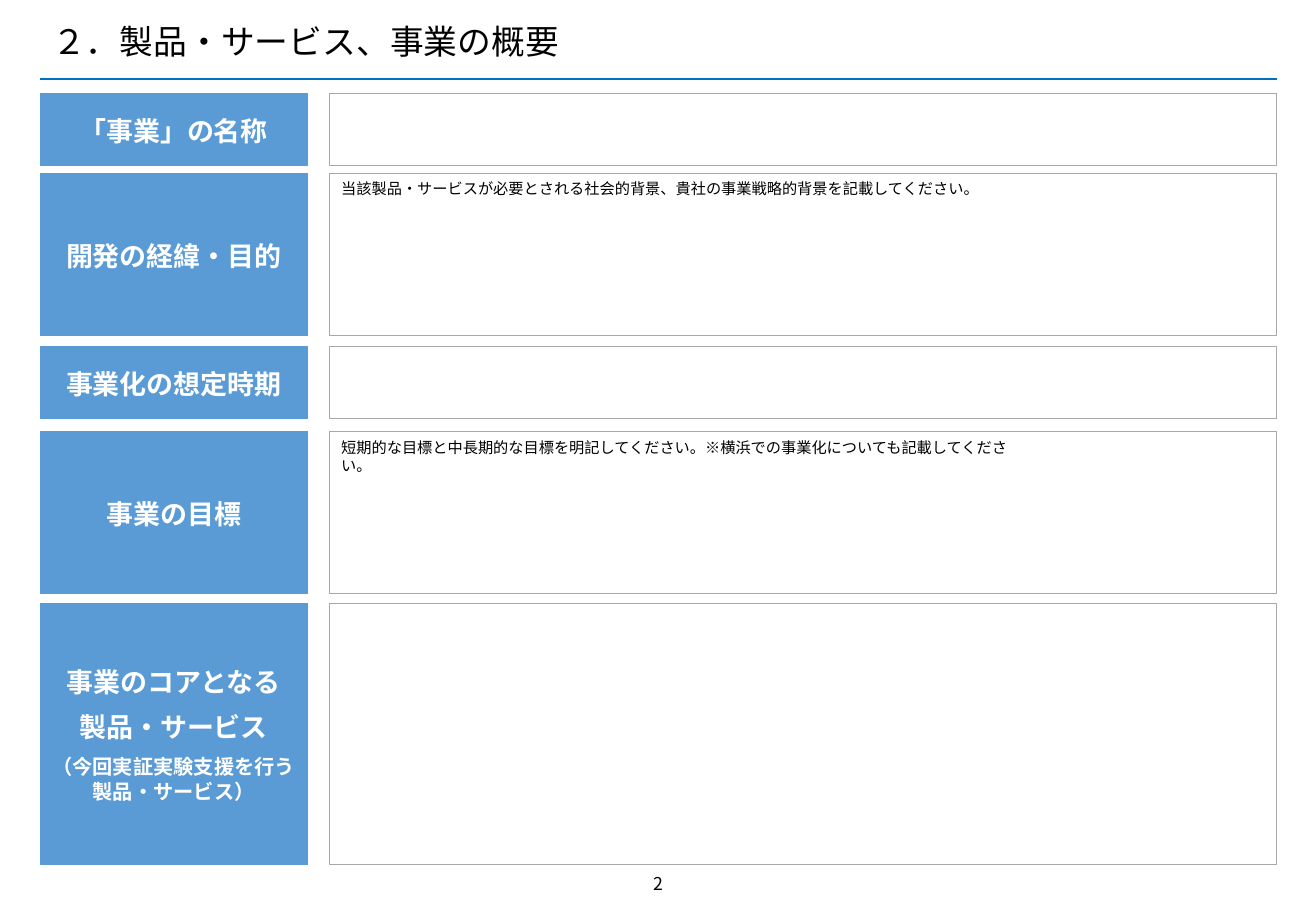
from dataclasses import dataclass
from lxml.etree import SubElement
from pptx import Presentation
from pptx.dml.color import RGBColor as RGB
from pptx.enum.shapes import MSO_CONNECTOR as Link, MSO_SHAPE as Kind
from pptx.enum.text import MSO_ANCHOR as Anchor, PP_ALIGN as Align
from pptx.oxml.ns import qn
from pptx.util import Pt


@dataclass(frozen=True)
class Theme:
    """Colours, font and type sizes of the slide."""
    font: str = "Noto Sans CJK JP"
    black: str = "000000"
    white: str = "FFFFFF"
    blue: str = "5B9BD5"
    rule: str = "0070C0"
    edge: str = "A7A8AA"
    title: float = 20
    label: float = 16
    sub: float = 12
    page: float = 10.5
    note: float = 9


class Sheet:
    """Draws styled elements on the current slide."""

    def __init__(self, slide, theme):
        self.shapes = slide.shapes
        self.theme = theme

    def add_run(self, para, text, size, color, bold=False):
        """Add one run of text to a paragraph."""
        run = para.add_run()
        run.text = text
        font = run.font
        font.name, font.size, font.bold = self.theme.font, Pt(size), bold
        font.color.rgb = RGB.from_string(color)
        props = run._r.get_or_add_rPr()
        SubElement(props, qn("a:ea")).set("typeface", self.theme.font)

    def text(self, area, text, size, align=Align.LEFT, anchor=Anchor.TOP, lead=1.0):
        """Add a text box with one paragraph."""
        frame = self.shapes.add_textbox(*map(Pt, area)).text_frame
        frame.word_wrap = True
        frame.vertical_anchor = anchor
        para = frame.paragraphs[0]
        para.alignment, para.line_spacing = align, lead
        self.add_run(para, text, size, self.theme.black)

    def rule(self, left, right, top):
        """Add the horizontal line under the title."""
        line = self.shapes.add_connector(
            Link.STRAIGHT, Pt(left), Pt(top), Pt(right), Pt(top))
        line.line.color.rgb = RGB.from_string(self.theme.rule)
        line.line.width = Pt(1)
        SubElement(line._element.spPr, qn("a:effectLst"))

    def box(self, area, fill, edge):
        """Add a plain rectangle."""
        box = self.shapes.add_shape(Kind.RECTANGLE, *map(Pt, area))
        box.shadow.inherit = False
        box.fill.solid()
        box.fill.fore_color.rgb = RGB.from_string(fill)
        box.line.color.rgb = RGB.from_string(edge)
        box.line.width = Pt(0.5)
        return box

    def label(self, area, lines):
        """Add a blue heading box with centred lines."""
        theme = self.theme
        frame = self.box(area, theme.blue, theme.blue).text_frame
        frame.word_wrap = True
        frame.vertical_anchor = Anchor.MIDDLE
        frame.margin_left = frame.margin_right = Pt(5.76)
        frame.margin_top = frame.margin_bottom = Pt(5.76)
        for i, (text, size) in enumerate(lines):
            para = frame.add_paragraph() if i else frame.paragraphs[0]
            para.alignment = Align.CENTER
            para.line_spacing, para.space_before = 1.06, Pt(6)
            self.add_run(para, text, size, theme.white, True)


def main():
    """Build the business overview form and save it."""
    deck = Presentation()
    deck.slide_width, deck.slide_height = Pt(780), Pt(540)
    theme = Theme()
    sheet = Sheet(deck.slides.add_slide(deck.slide_layouts[6]), theme)

    left, field, width = 23.8, 195.2, 561.6
    short, tall, big = 42.6, 95.8, 154.8
    rows = [
        (55.4, short, [("「事業」の名称", theme.label)], ""),
        (103, tall, [("開発の経緯・目的", theme.label)],
         "当該製品・サービスが必要とされる社会的背景、貴社の事業戦略的背景を記載してください。"),
        (205.6, short, [("事業化の想定時期", theme.label)], ""),
        (256, tall, [("事業の目標", theme.label)],
         "短期的な目標と中長期的な目標を明記してください。※横浜での事業化についても記載してください。"),
        (357.6, big, [("事業のコアとなる", theme.label),
                      ("製品・サービス", theme.label),
                      ("（今回実証実験支援を行う製品・サービス）", theme.sub)], ""),
    ]

    sheet.rule(left, field + width, 46.8)
    sheet.text((359.2, 514, 62, 21), "2", theme.page, Align.CENTER)
    sheet.text((left, 10.8, 672.4, 30.2), "２．製品・サービス、事業の概要",
               theme.title, anchor=Anchor.MIDDLE, lead=0.9)
    for top, height, lines, note in rows:
        sheet.label((left, top, 158.4, height), lines)
        sheet.box((field, top, width, height), theme.white, theme.edge)
        if note:
            sheet.text((field, top, 409.6, 18), note, theme.note)
    deck.save("out.pptx")


if __name__ == "__main__":
    main()
